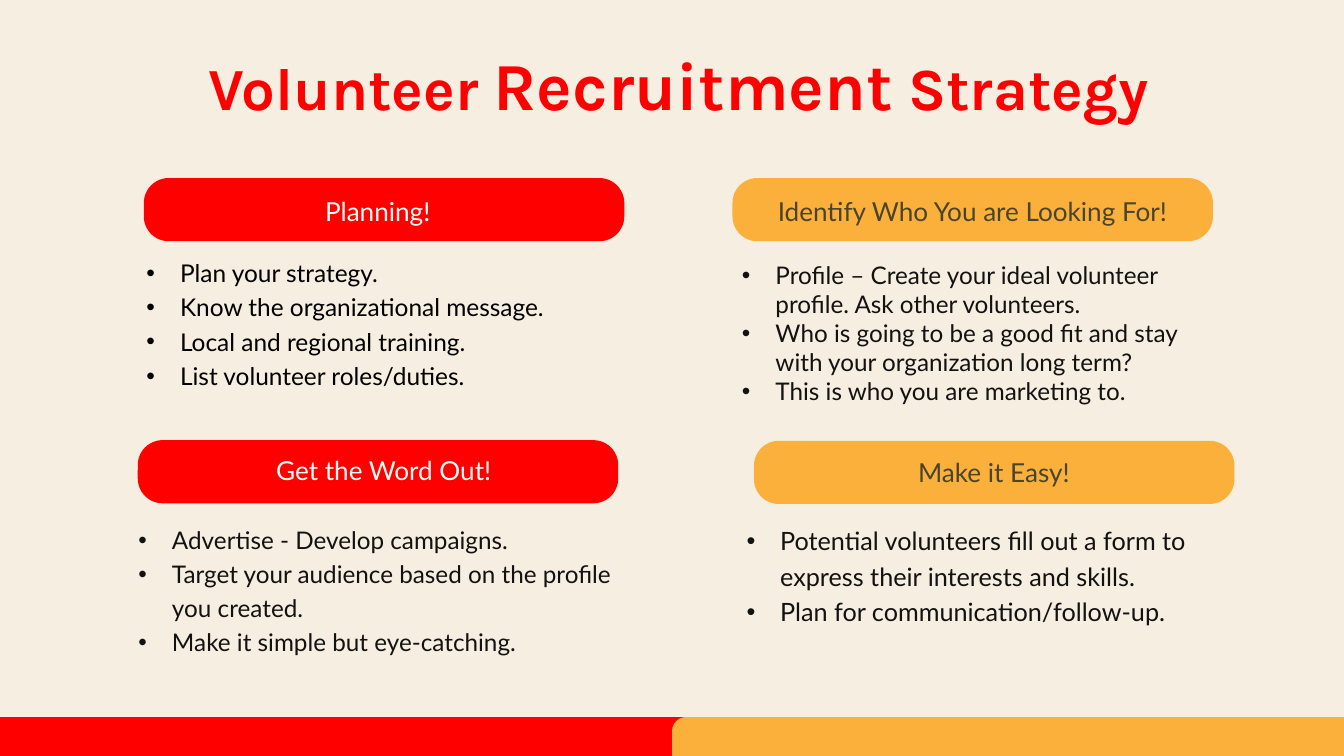
from dataclasses import dataclass

from lxml import etree
from pptx import Presentation
from pptx import util as u
from pptx.dml.color import RGBColor
from pptx.enum import shapes, text
from pptx.oxml import ns


@dataclass(frozen=True)
class Theme:
    paper: str = "F6EEE1"
    red: str = "FF0000"
    amber: str = "FBB03B"
    cream: str = "FFFBF5"
    olive: str = "4A452A"
    ink: str = "121212"
    black: str = "000000"
    title_font: str = "Karla"
    body_font: str = "Lato"
    title_size: float = 64
    title_accent_size: float = 72
    heading_size: float = 28
    leading: float = 1.4


THEME = Theme()
PILL_SIZE = (7.15, 0.94)

# Each section: pill position, pill fill, heading colour, heading box, heading,
# list box, list size, list colour, list leading (None for single), list items
SECTIONS = [
    ((2.14, 2.65), THEME.red, THEME.cream, (2.62, 2.83, 6, 0.54), "Planning!",
     (2.18, 3.77, 6.88, 2.03), 26.2, THEME.black, THEME.leading,
     ["Plan your strategy.",
      "Know the organizational message.",
      "Local and regional training.",
      "List volunteer roles/duties."]),
    ((10.9, 2.65), THEME.amber, THEME.olive, (11.47, 2.83, 6, 0.5),
     "Identify Who You are Looking For!",
     (11.04, 3.87, 7.15, 2.19), 26, THEME.ink, None,
     ["Profile – Create your ideal volunteer profile. Ask other volunteers.",
      "Who is going to be a good fit and stay with your organization long term?",
      "This is who you are marketing to."]),
    ((2.05, 6.55), THEME.red, THEME.cream, (2.83, 6.68, 5.76, 0.54), "Get the Word Out!",
     (2.06, 7.75, 7.44, 1.98), 26, THEME.ink, THEME.leading,
     ["Advertise - Develop campaigns.",
      "Target your audience based on the profile you created.",
      "Make it simple but eye-catching."]),
    ((11.22, 6.56), THEME.amber, THEME.olive, (11.91, 6.71, 5.76, 0.5), "Make it Easy!",
     (11.11, 7.75, 7.37, 1.56), 27, THEME.ink, THEME.leading,
     ["Potential volunteers fill out a form to express their interests and skills.",
      "Plan for communication/follow-up."]),
]


def add_block(page, bounds, fill, radius=0):
    """Plain filled rectangle, rounded when a corner radius in inches is given."""
    kind = shapes.MSO_SHAPE.ROUNDED_RECTANGLE if radius else shapes.MSO_SHAPE.RECTANGLE
    block = page.shapes.add_shape(kind, *map(u.Inches, bounds))
    if radius:
        block.adjustments[0] = radius / min(bounds[2:])
    block.shadow.inherit = False
    block.fill.solid()
    block.fill.fore_color.rgb = RGBColor.from_string(fill)
    block.line.fill.background()


def add_frame(page, bounds):
    """Wrapping text box without margins."""
    frame = page.shapes.add_textbox(*map(u.Inches, bounds)).text_frame
    frame.word_wrap = True
    frame.auto_size = text.MSO_AUTO_SIZE.SHAPE_TO_FIT_TEXT
    frame.margin_left = frame.margin_right = frame.margin_top = frame.margin_bottom = 0
    return frame


def style_font(font, name, size, color, bold=False):
    font.name = name
    font.size = u.Pt(size)
    font.bold = bold
    font.color.rgb = RGBColor.from_string(color)


def add_title(page, bounds, parts):
    para = add_frame(page, bounds).paragraphs[0]
    para.alignment = text.PP_ALIGN.CENTER
    para.line_spacing = u.Pt(THEME.title_size)
    for words, size in parts:
        span = para.add_run()
        span.text = words
        style_font(span.font, THEME.title_font, size, THEME.red, bold=True)


def add_heading(page, bounds, words, color):
    frame = add_frame(page, bounds)
    frame.text = words
    para = frame.paragraphs[0]
    para.alignment = text.PP_ALIGN.CENTER
    para.line_spacing = u.Pt(THEME.heading_size * THEME.leading)
    style_font(para.runs[0].font, THEME.body_font, THEME.heading_size, color)


def add_bullet(para):
    properties = para._p.get_or_add_pPr()
    indent = u.Inches(0.5)
    properties.set("marL", str(indent))
    properties.set("indent", str(-indent))
    etree.SubElement(properties, ns.qn("a:buFont"), typeface="Arial")
    etree.SubElement(properties, ns.qn("a:buChar"), char="•")


def add_list(page, bounds, items, size, color, leading):
    frame = add_frame(page, bounds)
    frame.text = "\n".join(items)
    for para in frame.paragraphs:
        add_bullet(para)
        if leading:
            para.line_spacing = u.Pt(round(size * leading, 1))
        style_font(para.runs[0].font, THEME.body_font, size, color)


def main():
    deck = Presentation()
    deck.slide_width, deck.slide_height = u.Inches(20), u.Inches(11.25)
    page = deck.slides.add_slide(deck.slide_layouts[6])
    page.background.fill.solid()
    page.background.fill.fore_color.rgb = RGBColor.from_string(THEME.paper)

    # Footer bands, running past the slide edges
    add_block(page, (-1.01, 10.67, 16.11, 1.95), THEME.red)
    add_block(page, (10, 10.67, 13.02, 1.56), THEME.amber, radius=0.21)

    # Title
    add_title(page, (2.51, 0.96, 15.17, 0.96),
              [("Volunteer ", THEME.title_size),
               ("Recruitment", THEME.title_accent_size),
               (" Strategy", THEME.title_size)])

    # Four sections: pill, heading and list
    for (pill_at, fill, heading_color, heading_box, heading,
         list_box, size, color, leading, items) in SECTIONS:
        add_block(page, pill_at + PILL_SIZE, fill, radius=0.37)
        add_heading(page, heading_box, heading, heading_color)
        add_list(page, list_box, items, size, color, leading)

    deck.save("out.pptx")


if __name__ == "__main__":
    main()
